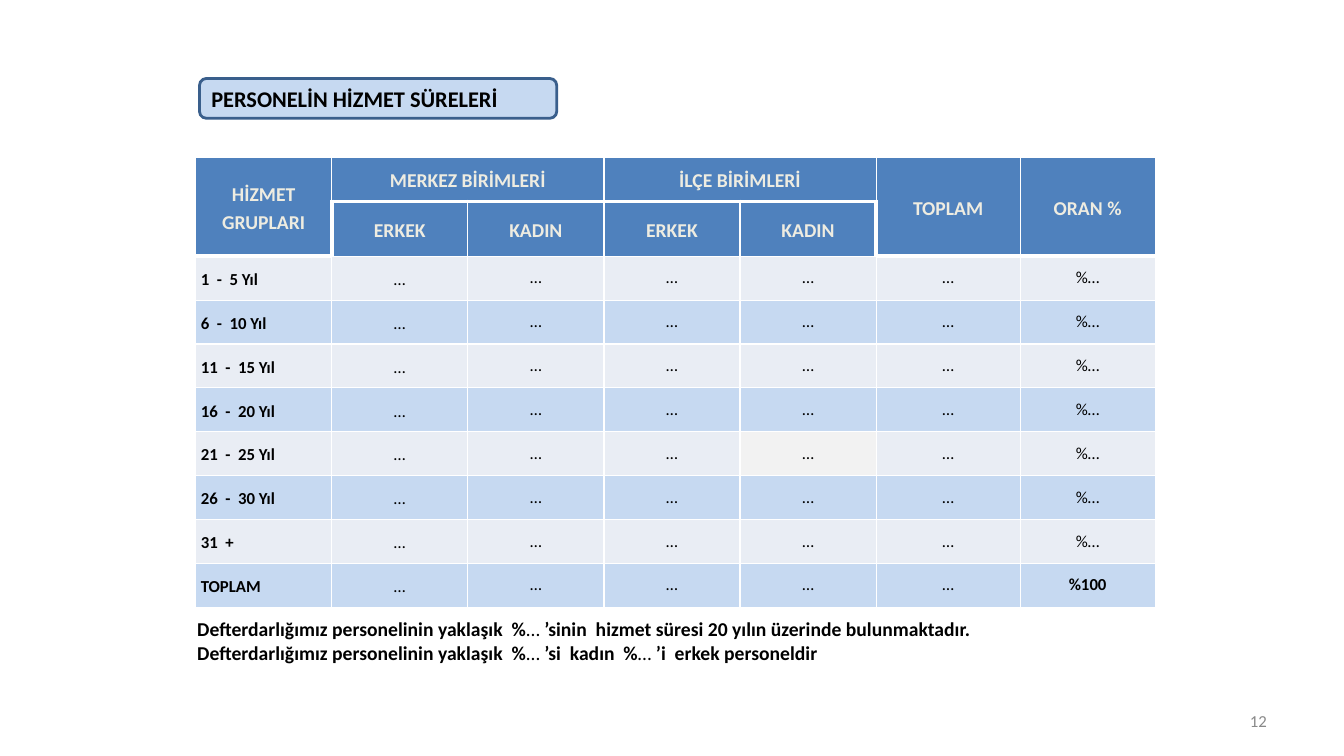
"""Builds the slide on staff service periods."""
import pptx
import pptx.dml.color
import pptx.enum.shapes
import pptx.enum.text
import pptx.oxml
import pptx.oxml.ns
import pptx.util

Cm = pptx.util.Cm
Pt = pptx.util.Pt
ALIGN = pptx.enum.text.PP_ALIGN
MIDDLE = pptx.enum.text.MSO_ANCHOR.MIDDLE

HEADER_BLUE = "4F81BD"
LIGHT_BLUE = "C6D9F1"
PALE_GREY = "E9EDF4"
COLUMN_WIDTHS = [3.43, 3.43, 3.43, 3.43, 3.43, 3.63, 3.4]
TALL_COLUMNS = (0, 5, 6)
HEADINGS = {
    (0, 0): "HİZMET GRUPLARI",
    (0, 1): "MERKEZ BİRİMLERİ",
    (0, 3): "İLÇE BİRİMLERİ",
    (0, 5): "TOPLAM",
    (0, 6): "ORAN %",
    (1, 1): "ERKEK",
    (1, 2): "KADIN",
    (1, 3): "ERKEK",
    (1, 4): "KADIN",
}
SERVICE_GROUPS = [
    "1  -  5 Yıl", "6  -  10 Yıl", "11  -  15 Yıl", "16  -  20 Yıl",
    "21  -  25 Yıl", "26  -  30 Yıl", "31  +", "TOPLAM",
]
NOTES = [
    ["Defterdarlığımız personelinin yaklaşık  %", "… ",
     "’sinin  hizmet süresi 20 yılın üzerinde bulunmaktadır."],
    ["Defterdarlığımız personelinin yaklaşık  %", "… ",
     "’si  kadın  %", "… ", "’i  erkek personeldir"],
]


def rgb(code):
    """Return the colour for a hex string."""
    return pptx.dml.color.RGBColor.from_string(code)


def style(paragraph, size, color, bold=None, align=ALIGN.LEFT):
    """Set the font and alignment of a paragraph."""
    paragraph.alignment = align
    paragraph.font.name = "Calibri"
    paragraph.font.size = Pt(size)
    paragraph.font.color.rgb = rgb(color)
    paragraph.font.bold = bold


def add_title(slide, left, top, width, height):
    """Add the rounded title label."""
    label = slide.shapes.add_shape(
        pptx.enum.shapes.MSO_SHAPE.ROUNDED_RECTANGLE, left, top, width, height)
    label.shadow.inherit = False
    label.fill.solid()
    label.fill.fore_color.rgb = rgb(LIGHT_BLUE)
    label.line.color.rgb = rgb("3A5F8C")
    label.line.width = Pt(2)
    label.text_frame.vertical_anchor = MIDDLE
    title = label.text_frame.paragraphs[0]
    title.text = "PERSONELİN HİZMET SÜRELERİ"
    style(title, 16, "000000", True)


def border_widths(row, column):
    """Return the left, right, top and bottom border widths of a cell."""
    tall = column in TALL_COLUMNS
    heavy = [
        (row, column) == (1, 1),
        (row, column) == (1, 4),
        row == 1 and not tall or row == 2 and tall,
        row == 0 or row == 1 and tall,
    ]
    return [3 if edge else 1 for edge in heavy]


def add_borders(cell, widths):
    """Draw white borders around a cell."""
    properties = cell._tc.get_or_add_tcPr()
    for index, (side, width) in enumerate(zip("LRTB", widths)):
        properties.insert(index, pptx.oxml.parse_xml(
            f'<a:ln{side} {pptx.oxml.ns.nsdecls("a")} w="{Pt(width)}">'
            f'<a:solidFill><a:srgbClr val="FFFFFF"/></a:solidFill></a:ln{side}>'))


def fill_cell(cell, fill, widths):
    """Set the fill, margins, anchor and borders of a cell."""
    cell.fill.solid()
    cell.fill.fore_color.rgb = rgb(fill)
    cell.margin_left = cell.margin_right = Cm(0.13)
    cell.margin_top = cell.margin_bottom = 0
    cell.vertical_anchor = MIDDLE
    add_borders(cell, widths)


def write_cell(cell, text, size, color, bold, align, spaced):
    """Write one paragraph into a cell."""
    paragraph = cell.text_frame.paragraphs[0]
    paragraph.text = text
    style(paragraph, size, color, bold, align)
    if spaced:
        paragraph.line_spacing = 1.15
        paragraph.space_before = Pt(14)


def body_text(row, column):
    """Return the text of a body cell."""
    if column == 0:
        return SERVICE_GROUPS[row]
    if column < 6:
        return "…"
    return "%100" if row == len(SERVICE_GROUPS) - 1 else "%…"


def add_service_table(slide, left, top, height):
    """Add the table of staff by service period."""
    row_count = len(SERVICE_GROUPS) + 2
    table = slide.shapes.add_table(
        row_count, len(COLUMN_WIDTHS), left, top,
        Cm(sum(COLUMN_WIDTHS)), height).table
    table.first_row = table.horz_banding = False
    for column, width in zip(table.columns, COLUMN_WIDTHS):
        column.width = Cm(width)

    for row in range(row_count):
        for column in range(len(COLUMN_WIDTHS)):
            fill = HEADER_BLUE if row < 2 else (PALE_GREY, LIGHT_BLUE)[row % 2]
            if (row, column) == (6, 4):
                fill = "F2F2F2"
            cell = table.cell(row, column)
            fill_cell(cell, fill, border_widths(row, column))
            if row >= 2:
                text = body_text(row - 2, column)
                write_cell(cell, text, 12, "000000",
                           column == 0 or text == "%100",
                           ALIGN.CENTER if column else ALIGN.LEFT, column < 2)

    for (row, column), heading in HEADINGS.items():
        write_cell(table.cell(row, column), heading, 14, "EEECE1", True,
                   ALIGN.CENTER, True)
    for column in TALL_COLUMNS:
        table.cell(0, column).merge(table.cell(1, column))
    for column in (1, 3):
        table.cell(0, column).merge(table.cell(0, column + 1))


def add_notes(slide, left, top, width, height):
    """Add the two summary sentences under the table."""
    frame = slide.shapes.add_textbox(left, top, width, height).text_frame
    frame.word_wrap = True
    for index, pieces in enumerate(NOTES):
        sentence = frame.add_paragraph() if index else frame.paragraphs[0]
        style(sentence, 14, "000000", align=ALIGN.JUSTIFY)
        for piece in pieces:
            run = sentence.add_run()
            run.text = piece
            run.font.bold = piece != "… "


def add_page_number(slide, left, top, width, height):
    """Add the page number at the lower right."""
    frame = slide.shapes.add_textbox(left, top, width, height).text_frame
    frame.word_wrap = True
    frame.vertical_anchor = MIDDLE
    number = frame.paragraphs[0]
    number.text = "12"
    style(number, 12, "898989", align=ALIGN.RIGHT)


def main():
    """Build the slide and save it."""
    deck = pptx.Presentation()
    deck.slide_width, deck.slide_height = Cm(33.87), Cm(19.05)
    slide = deck.slides.add_slide(deck.slide_layouts[6])
    add_title(slide, Cm(5.03), Cm(1.98), Cm(9), Cm(1))
    add_service_table(slide, Cm(4.93), Cm(3.97), Cm(11.05))
    add_notes(slide, Cm(4.72), Cm(15.42), Cm(23.62), Cm(1.45))
    add_page_number(slide, Cm(24.28), Cm(17.65), Cm(7.9), Cm(1.02))
    deck.save("out.pptx")


if __name__ == "__main__":
    main()
